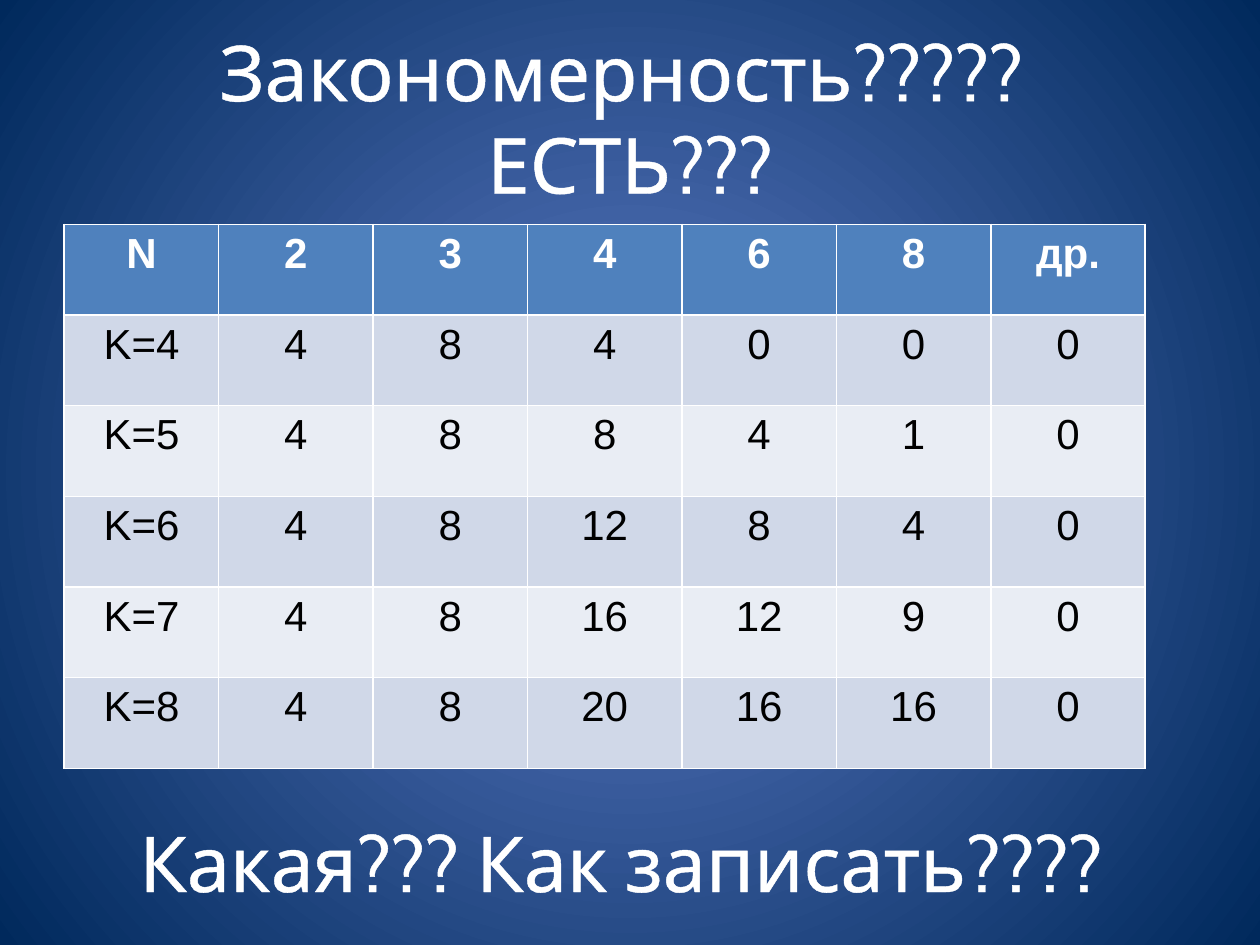
from dataclasses import dataclass

from lxml.etree import SubElement
from pptx import Presentation
from pptx.dml.color import RGBColor as RGB
from pptx.enum.text import MSO_ANCHOR as Anchor, PP_ALIGN as Align
from pptx.oxml.ns import qn
from pptx.util import Inches, Pt


@dataclass(frozen=True)
class Theme:
    glow: RGB = RGB(0x5E, 0x7C, 0xC5)
    navy: RGB = RGB(0x00, 0x29, 0x5C)
    white: RGB = RGB(0xFF, 0xFF, 0xFF)
    black: RGB = RGB(0x00, 0x00, 0x00)
    head: RGB = RGB(0x4F, 0x81, 0xBD)
    bands: tuple = (RGB(0xD0, 0xD8, 0xE8), RGB(0xE9, 0xED, 0xF4))
    big_face: str = "Cabin"
    cell_face: str = "Arial"
    big: int = 44
    small: int = 24
    edge: float = 1.45


THEME = Theme()

COUNTS = [
    ["N", "2", "3", "4", "6", "8", "др."],
    ["K=4", "4", "8", "4", "0", "0", "0"],
    ["K=5", "4", "8", "8", "4", "1", "0"],
    ["K=6", "4", "8", "12", "8", "4", "0"],
    ["K=7", "4", "8", "16", "12", "9", "0"],
    ["K=8", "4", "8", "20", "16", "16", "0"],
]


def style(par, face, size, color, bold=False):
    par.alignment = Align.CENTER
    font = par.font
    font.name, font.size, font.bold = face, Pt(size), bold
    font.color.rgb = color


def paint_back(slide):
    """Fill the background with a gradient that spreads from the centre."""
    fill = slide.background.fill
    fill.gradient()
    for stop, color in zip(fill.gradient_stops, (THEME.glow, THEME.navy)):
        stop.color.rgb = color
    grad = slide.element.find(".//" + qn("a:gradFill"))
    grad.remove(grad.find(qn("a:lin")))
    route = SubElement(grad, qn("a:path"), path="circle")
    SubElement(route, qn("a:fillToRect"), l="100000", t="100000", r="100000", b="100000")


def outline(run):
    """Draw a white edge around the letters of a run."""
    props = run.font.fill and run._r.get_or_add_rPr()
    line = SubElement(props, qn("a:ln"), w=str(Pt(THEME.edge)))
    solid = SubElement(line, qn("a:solidFill"))
    SubElement(solid, qn("a:srgbClr"), val=str(THEME.white))


def set_banner(shape, left, top, text):
    shape.left, shape.top = Inches(left), Inches(top)
    shape.width, shape.height = Inches(9), Inches(1.25)
    frame = shape.text_frame
    frame.word_wrap = True
    frame.vertical_anchor = Anchor.MIDDLE
    frame.text = text
    par = frame.paragraphs[0]
    style(par, THEME.big_face, THEME.big, THEME.white)
    for run in par.runs:
        outline(run)


def add_grid(slide, data, left, top, wide, high):
    rows, cols = len(data), len(data[0])
    grid = slide.shapes.add_table(
        rows, cols, Inches(left), Inches(top), Inches(wide), Inches(high)
    ).table
    for i, row in enumerate(data):
        head = i == 0
        for j, text in enumerate(row):
            cell = grid.cell(i, j)
            cell.fill.solid()
            cell.fill.fore_color.rgb = THEME.head if head else THEME.bands[(i - 1) % 2]
            cell.text = text
            color = THEME.white if head else THEME.black
            style(cell.text_frame.paragraphs[0], THEME.cell_face, THEME.small, color, head)


def main():
    deck = Presentation()
    deck.slide_width, deck.slide_height = Inches(10), Inches(7.5)
    slide = deck.slides.add_slide(deck.slide_layouts[5])
    paint_back(slide)
    set_banner(slide.shapes.title, 0.5, 0.3, "Закономерность????? \vЕСТЬ???")
    add_grid(slide, COUNTS, 0.51, 1.78, 8.58, 4.32)
    box = slide.shapes.add_textbox(0, 0, 0, 0)
    set_banner(box, 0.43, 6.21, "Какая??? Как записать????")
    deck.save("out.pptx")


if __name__ == "__main__":
    main()
